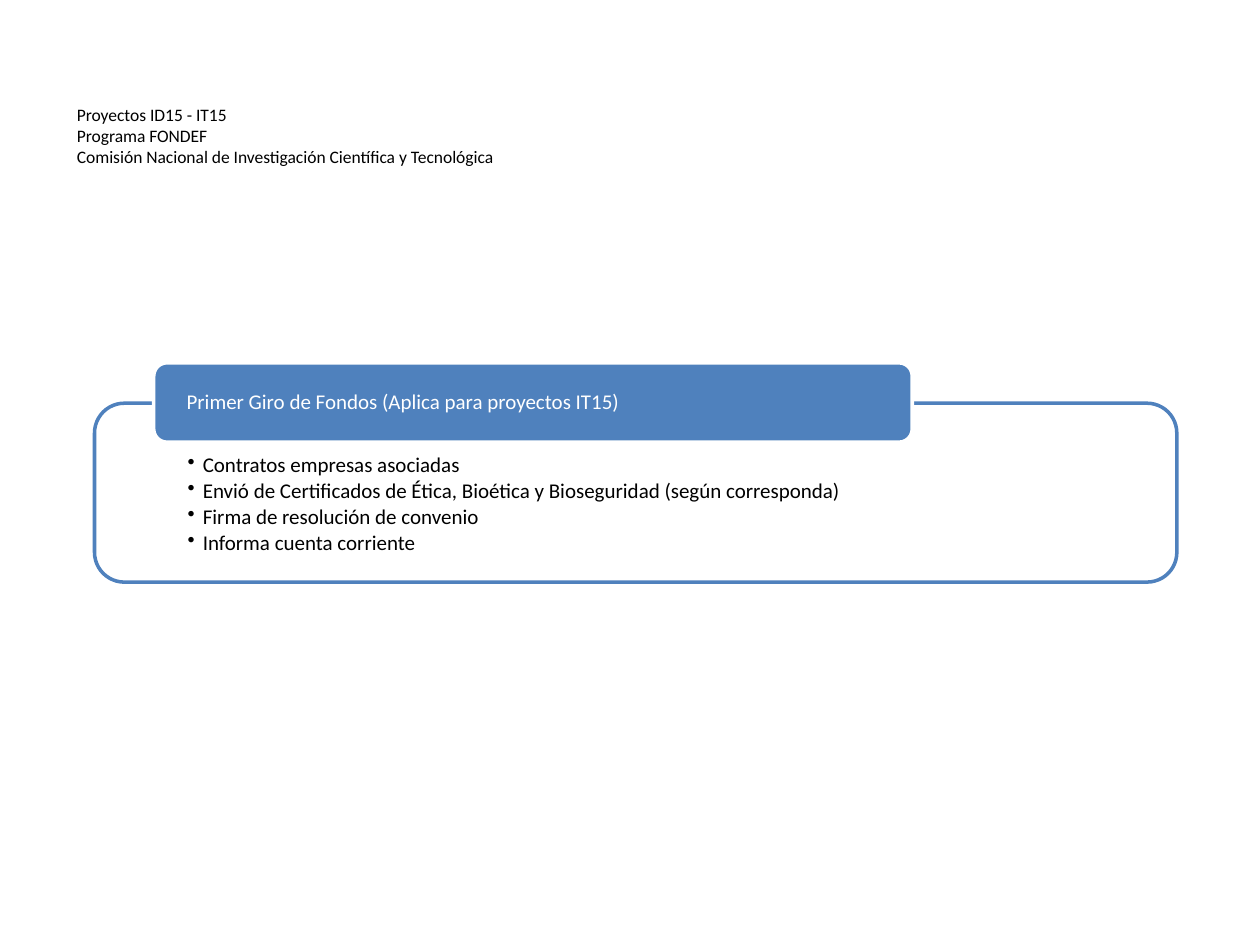
import pptx
import pptx.util
import pptx.dml.color
import pptx.enum.shapes
import pptx.enum.text
from lxml import etree
from pptx.oxml.ns import qn
from pptx.util import Inches, Pt

COLORS = {"blue": "4F81BD", "white": "FFFFFF", "black": "000000"}
FONT = "Calibri"
REQUIREMENTS = [
    "Contratos empresas asociadas",
    "Envió de Certificados de Ética, Bioética y Bioseguridad (según corresponda)",
    "Firma de resolución de convenio",
    "Informa cuenta corriente",
]


def rgb(name):
    return pptx.dml.color.RGBColor.from_string(COLORS[name])


def format_paragraph(p, size, color):
    p.alignment = pptx.enum.text.PP_ALIGN.LEFT
    for r in p.runs:
        r.font.name = FONT
        r.font.size = Pt(size)
        r.font.color.rgb = rgb(color)


def add_title(s, lines):
    sp = s.shapes.title
    sp.left, sp.top = Inches(0.51), Inches(0.52)
    sp.width, sp.height = Inches(7.81), Inches(1.11)
    tf = sp.text_frame
    tf.text = "\v".join(lines)
    tf.vertical_anchor = pptx.enum.text.MSO_ANCHOR.MIDDLE
    format_paragraph(tf.paragraphs[0], 10, "black")


def add_panel(s, left, top, width, height, fill, line):
    sp = s.shapes.add_shape(
        pptx.enum.shapes.MSO_SHAPE.ROUNDED_RECTANGLE,
        Inches(left), Inches(top), Inches(width), Inches(height))
    sp.shadow.inherit = False
    sp.fill.solid()
    sp.fill.fore_color.rgb = rgb(fill)
    sp.line.color.rgb = rgb(line)
    sp.line.width = Pt(2)
    return sp


def set_transparency(sp, opacity):
    color = sp.fill._xPr.find(qn("a:solidFill"))[0]
    etree.SubElement(color, qn("a:alpha"), val=str(opacity * 1000))


def set_text(sp, lines, color, anchor, side, top, bottom, after):
    tf = sp.text_frame
    tf.word_wrap = True
    tf.vertical_anchor = anchor
    tf.margin_left = tf.margin_right = Inches(side)
    tf.margin_top, tf.margin_bottom = Inches(top), Inches(bottom)
    tf.text = "\n".join(lines)
    for p in tf.paragraphs:
        p.line_spacing = 0.9
        p.space_after = Pt(after)
        format_paragraph(p, 12, color)


def add_bullets(tf):
    for p in tf.paragraphs:
        p.level = 1
        pPr = p._p.get_or_add_pPr()
        pPr.set("marL", str(Inches(0.12)))
        pPr.set("indent", str(-Inches(0.12)))
        etree.SubElement(pPr, qn("a:buChar"), char="•")


def main():
    prs = pptx.Presentation()
    prs.slide_width, prs.slide_height = Inches(10), Inches(7.5)
    s = prs.slides.add_slide(prs.slide_layouts[5])
    anchors = pptx.enum.text.MSO_ANCHOR

    frame = add_panel(s, 0.75, 3.2, 8.59, 1.42, "white", "blue")
    set_transparency(frame, 90)
    set_text(frame, REQUIREMENTS, "black", anchors.TOP, 0.67, 0.34, 0.09, 1.8)
    add_bullets(frame.text_frame)

    header = add_panel(s, 1.22, 2.88, 6.02, 0.63, "blue", "white")
    set_text(header, ["Primer Giro de Fondos (Aplica para proyectos IT15)"],
             "white", anchors.MIDDLE, 0.23, 0, 0, 0)

    add_title(s, ["Proyectos ID15 - IT15", "Programa FONDEF",
                  "Comisión Nacional de Investigación Científica y Tecnológica"])
    prs.save("out.pptx")


if __name__ == "__main__":
    main()
